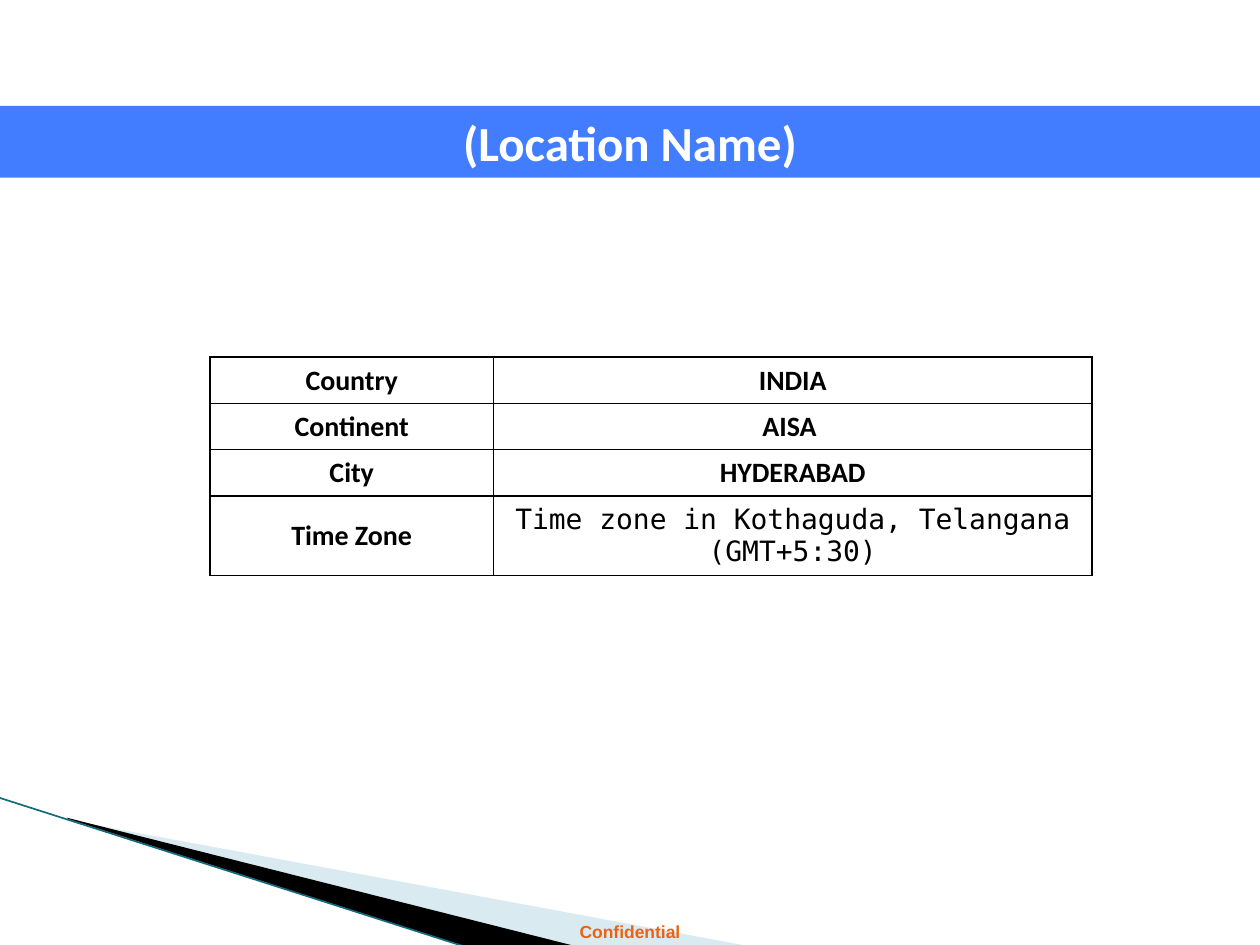
from dataclasses import dataclass

from lxml.etree import SubElement
from pptx import Presentation
from pptx.dml.color import RGBColor
from pptx.enum.shapes import MSO_CONNECTOR as Connector, MSO_SHAPE as Preset
from pptx.enum.text import MSO_ANCHOR as Anchor, PP_ALIGN as Align
from pptx.oxml.ns import qn
from pptx.util import Inches, Pt

WIDTH, HEIGHT = 10, 7.5
BLACK, WHITE, BLUE, ORANGE = "000000", "FFFFFF", "437DFF", "EB6312"
PALE_BLUE, TEAL = "A0CBDC", "14697D"
HEADING = {"name": "Calibri", "size": Pt(28), "bold": True}
FOOTER = {"name": "Arial", "size": Pt(10), "bold": True}
LABEL = {"name": "Calibri", "size": Pt(16), "bold": True}
ZONE = {"name": "DejaVu Sans Mono", "size": Pt(16), "bold": False}


@dataclass(frozen=True)
class Wedge:
    """A filled corner outline, with points in hundredths of an inch."""
    points: tuple
    color: str
    opacity: int = 100


@dataclass(frozen=True)
class Fact:
    """One table row: a label, its value and the value's format."""
    label: str
    value: str
    style: dict
    height: float = 0.36


WEDGES = (
    Wedge(((55, 651), (595, 751), (456, 751), (55, 650)), PALE_BLUE, 40),
    Wedge(((53, 649), (457, 751), (372, 752), (54, 650)), BLACK),
)
FACTS = (
    Fact("Country", "INDIA", LABEL),
    Fact("Continent", "AISA ", LABEL),
    Fact("City", "HYDERABAD", LABEL),
    Fact("Time Zone", "Time zone in Kothaguda, Telangana (GMT+5:30)", ZONE, 0.63),
)
COLUMN_SHARES = (0.225, 0.475)


def rgb(color: str) -> RGBColor:
    """Turn a hex string into a colour."""
    return RGBColor.from_string(color)


def across(share: float) -> int:
    """Give a share of the slide's width."""
    return Inches(WIDTH * share)


def down(share: float) -> int:
    """Give a share of the slide's height."""
    return Inches(HEIGHT * share)


def write(frame, words: str, style: dict, color: str) -> None:
    """Write one centred paragraph in the given format."""
    frame.word_wrap = True
    paragraph = frame.paragraphs[0]
    paragraph.alignment = Align.CENTER
    run = paragraph.add_run()
    run.text = words
    for attribute, value in style.items():
        setattr(run.font, attribute, value)
    run.font.color.rgb = rgb(color)


def draw_wedge(slide, wedge: Wedge) -> None:
    """Draw a corner wedge without an outline."""
    start, *rest = wedge.points
    builder = slide.shapes.build_freeform(*start, scale=Inches(0.01))
    builder.add_line_segments(rest, close=True)
    outline = builder.convert_to_shape()
    outline.shadow.inherit = False
    outline.fill.solid()
    outline.fill.fore_color.rgb = rgb(wedge.color)
    outline.line.fill.background()
    if wedge.opacity < 100:
        tint = outline.fill._xPr.find(".//" + qn("a:srgbClr"))
        SubElement(tint, qn("a:alpha"), val=str(wedge.opacity * 1000))


def draw_edge(slide) -> None:
    """Draw the thin line along the corner wedges."""
    edge = slide.shapes.add_connector(
        Connector.STRAIGHT, Inches(-0.01), Inches(6.33), Inches(3.71), Inches(7.52))
    edge.line.color.rgb = rgb(TEAL)
    edge.line.width = Pt(0.95)
    SubElement(edge._element.spPr, qn("a:effectLst"))


def draw_footer(slide) -> None:
    """Write the footer centred at the bottom."""
    footer = slide.shapes.add_textbox(0, down(0.968), across(1), down(0.036))
    write(footer.text_frame, "Confidential", FOOTER, ORANGE)


def draw_banner(slide) -> None:
    """Draw the full-width title banner."""
    banner = slide.shapes.add_shape(
        Preset.RECTANGLE, 0, Inches(0.84), across(1), Inches(0.57))
    banner.shadow.inherit = False
    banner.fill.solid()
    banner.fill.fore_color.rgb = rgb(BLUE)
    banner.line.fill.background()
    banner.text_frame.vertical_anchor = Anchor.MIDDLE
    write(banner.text_frame, "(Location Name)", HEADING, WHITE)


def fill_cell(cell, words: str, style: dict) -> None:
    """Write a bordered, unfilled cell."""
    write(cell.text_frame, words, style, BLACK)
    cell.vertical_anchor = Anchor.MIDDLE
    properties = cell._tc.get_or_add_tcPr()
    for side in ("lnL", "lnR", "lnT", "lnB"):
        border = SubElement(properties, qn(f"a:{side}"), w=str(Pt(1)))
        paint = SubElement(border, qn("a:solidFill"))
        SubElement(paint, qn("a:srgbClr"), val=BLACK)
    cell.fill.background()


def draw_facts(slide) -> None:
    """Draw the table of location facts."""
    height = Inches(sum(fact.height for fact in FACTS))
    table = slide.shapes.add_table(
        len(FACTS), len(COLUMN_SHARES), across(1 / 6), down(0.378),
        across(sum(COLUMN_SHARES)), height).table
    table.first_row = table.horz_banding = False
    for column, share in zip(table.columns, COLUMN_SHARES):
        column.width = across(share)
    for row, fact in zip(table.rows, FACTS):
        row.height = Inches(fact.height)
        fill_cell(row.cells[0], fact.label, LABEL)
        fill_cell(row.cells[1], fact.value, fact.style)


def main() -> None:
    """Build and save the location slide."""
    deck = Presentation()
    deck.slide_width, deck.slide_height = across(1), down(1)
    slide = deck.slides.add_slide(deck.slide_layouts[6])
    for wedge in WEDGES:
        draw_wedge(slide, wedge)
    draw_edge(slide)
    draw_footer(slide)
    draw_banner(slide)
    draw_facts(slide)
    deck.save("out.pptx")


if __name__ == "__main__":
    main()
